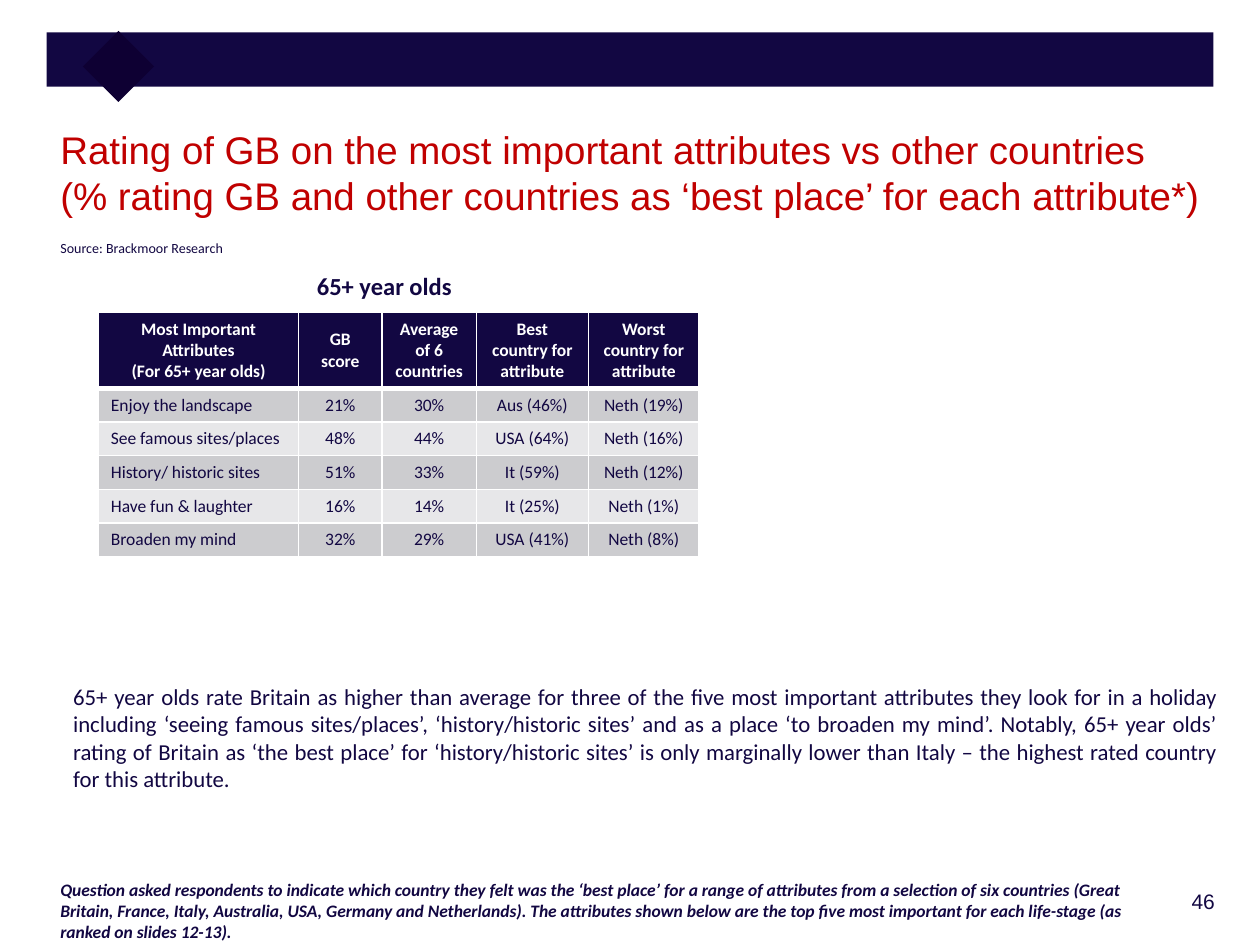
from dataclasses import dataclass

from lxml import etree
from pptx import Presentation
from pptx.dml.color import RGBColor
from pptx.enum.shapes import MSO_SHAPE as Shape
from pptx.enum.text import MSO_ANCHOR as Anchor, PP_ALIGN as Align
from pptx.oxml.ns import qn
from pptx.util import Pt


@dataclass(frozen=True)
class Theme:
    navy: str = "120742"
    diamond: str = "0E0033"
    red: str = "C00000"
    white: str = "FFFFFF"
    odd_row: str = "CCCCCF"
    even_row: str = "E7E7E9"
    heading_font: str = "Arial"
    body_font: str = "Calibri"
    title: int = 22
    caption: int = 14
    body: int = 13
    number: int = 12
    small: int = 10
    source: int = 8


THEME = Theme()

COLUMN_WIDTHS = [114.5, 47.5, 54, 64, 63.4]
HEADER_HEIGHT, ROW_HEIGHT = 42.8, 19.2
HEADER = [
    ["Most Important Attributes", "(For 65+ year olds)"],
    ["GB score"],
    ["Average of 6 countries"],
    ["Best country for attribute"],
    ["Worst country for attribute"],
]
RATINGS = [
    ("Enjoy the landscape", "21%", "30%", "Aus (46%)", "Neth (19%)"),
    ("See famous sites/places", "48%", "44%", "USA (64%)", "Neth (16%)"),
    ("History/ historic sites", "51%", "33%", "It (59%)", "Neth (12%)"),
    ("Have fun & laughter", "16%", "14%", "It (25%)", "Neth (1%)"),
    ("Broaden my mind", "32%", "29%", "USA (41%)", "Neth (8%)"),
]


def add_span(para, text, size, color=THEME.navy, font=THEME.body_font,
             bold=False, italic=False):
    span = para.add_run()
    span.text = text
    span.font.name = font
    span.font.size = Pt(size)
    span.font.bold = bold
    span.font.italic = italic
    span.font.color.rgb = RGBColor.from_string(color)


def add_text(page, box, lines, size, align=Align.LEFT, wrap=True, inset=7.2, **style):
    """Place one paragraph whose lines are parted by line breaks."""
    frame = page.shapes.add_textbox(*map(Pt, box)).text_frame
    frame.word_wrap = wrap
    frame.margin_left = Pt(inset)
    para = frame.paragraphs[0]
    para.alignment = align
    for index, line in enumerate(lines):
        if index:
            para.add_line_break()
        add_span(para, line, size, **style)


def add_block(page, box, color, turn=0):
    block = page.shapes.add_shape(Shape.RECTANGLE, *map(Pt, box))
    block.shadow.inherit = False
    block.fill.solid()
    block.fill.fore_color.rgb = RGBColor.from_string(color)
    block.line.fill.background()
    block.rotation = turn


def add_banner(page, box):
    left, top, width, height = box
    side = 28.8
    add_block(page, box, THEME.navy)
    add_block(page, (left + 26.6, top + 5.1, side, side), THEME.diamond, turn=45)


def set_borders(cell, bottom):
    props = cell._tc.get_or_add_tcPr()
    widths = {"a:lnL": 1, "a:lnR": 1, "a:lnT": 1, "a:lnB": bottom}
    for index, (tag, width) in enumerate(widths.items()):
        line = etree.Element(qn(tag), w=str(Pt(width)))
        fill = etree.SubElement(line, qn("a:solidFill"))
        etree.SubElement(fill, qn("a:srgbClr"), val=THEME.white)
        props.insert(index, line)


def fill_cell(cell, lines, fill, align, color=THEME.navy, bold=False, bottom=1):
    cell.fill.solid()
    cell.fill.fore_color.rgb = RGBColor.from_string(fill)
    cell.vertical_anchor = Anchor.MIDDLE
    set_borders(cell, bottom)
    frame = cell.text_frame
    for index, line in enumerate(lines):
        para = frame.add_paragraph() if index else frame.paragraphs[0]
        para.alignment = align
        add_span(para, line, THEME.small, color, bold=bold)


def add_ratings(page, left, top):
    height = HEADER_HEIGHT + ROW_HEIGHT * len(RATINGS)
    box = (left, top, sum(COLUMN_WIDTHS), height)
    table = page.shapes.add_table(
        len(RATINGS) + 1, len(HEADER), *map(Pt, box)).table
    for column, width in zip(table.columns, COLUMN_WIDTHS):
        column.width = Pt(width)
    for index, row in enumerate(table.rows):
        row.height = Pt(ROW_HEIGHT if index else HEADER_HEIGHT)

    # Header row
    for index, lines in enumerate(HEADER):
        fill_cell(table.cell(0, index), lines, THEME.navy, Align.CENTER,
                  THEME.white, bold=True, bottom=3)

    # Banded rating rows
    for row, values in enumerate(RATINGS, start=1):
        fill = THEME.odd_row if row % 2 else THEME.even_row
        for index, value in enumerate(values):
            align = Align.CENTER if index else Align.LEFT
            fill_cell(table.cell(row, index), [value], fill, align)


def build_page(page):
    # Banner and page number
    add_banner(page, (26.7, 18.5, 666.7, 31))
    add_text(page, (614, 504, 87.3, 26), ["46"], THEME.number, Align.RIGHT,
             font=THEME.heading_font)

    # Title and source
    add_text(page, (27.4, 68.4, 672.5, 64), [
        "Rating of GB on the most important attributes vs other countries",
        "(% rating GB and other countries as ‘best place’ for each attribute*)",
    ], THEME.title, color=THEME.red, font=THEME.heading_font)
    add_text(page, (27.4, 133.2, 108, 17), ["Source: Brackmoor Research"],
             THEME.source, wrap=False)

    # Ratings table with its caption
    add_text(page, (153.4, 151.2, 132.5, 24.3), ["65+ year olds"],
             THEME.caption, Align.CENTER, bold=True)
    add_ratings(page, 56.2, 178.6)

    # Commentary
    add_text(page, (38.9, 386.6, 663, 108.7), [
        "65+ year olds rate Britain as higher than average for three of the five most "
        "important attributes they look for in a holiday including ‘seeing famous "
        "sites/places’, ‘history/historic sites’ and as a place ‘to broaden my mind’. "
        "Notably, 65+ year olds’ rating of Britain as ‘the best place’ for "
        "‘history/historic sites’ is only marginally lower than Italy – the highest "
        "rated country for this attribute."
    ], THEME.body, Align.JUSTIFY, inset=2.9)

    # Footnote
    add_text(page, (27.4, 499, 645.8, 43.6), [
        "Question asked respondents to indicate which country they felt was the ‘best "
        "place’ for a range of attributes from a selection of six countries (Great "
        "Britain, France, Italy, Australia, USA, Germany and Netherlands). The "
        "attributes shown below are the top five most important for each life-stage "
        "(as ranked on slides 12-13)."
    ], THEME.small, bold=True, italic=True)


def main():
    deck = Presentation()
    deck.slide_width, deck.slide_height = Pt(720), Pt(540)
    build_page(deck.slides.add_slide(deck.slide_layouts[6]))
    deck.save("out.pptx")


if __name__ == "__main__":
    main()
